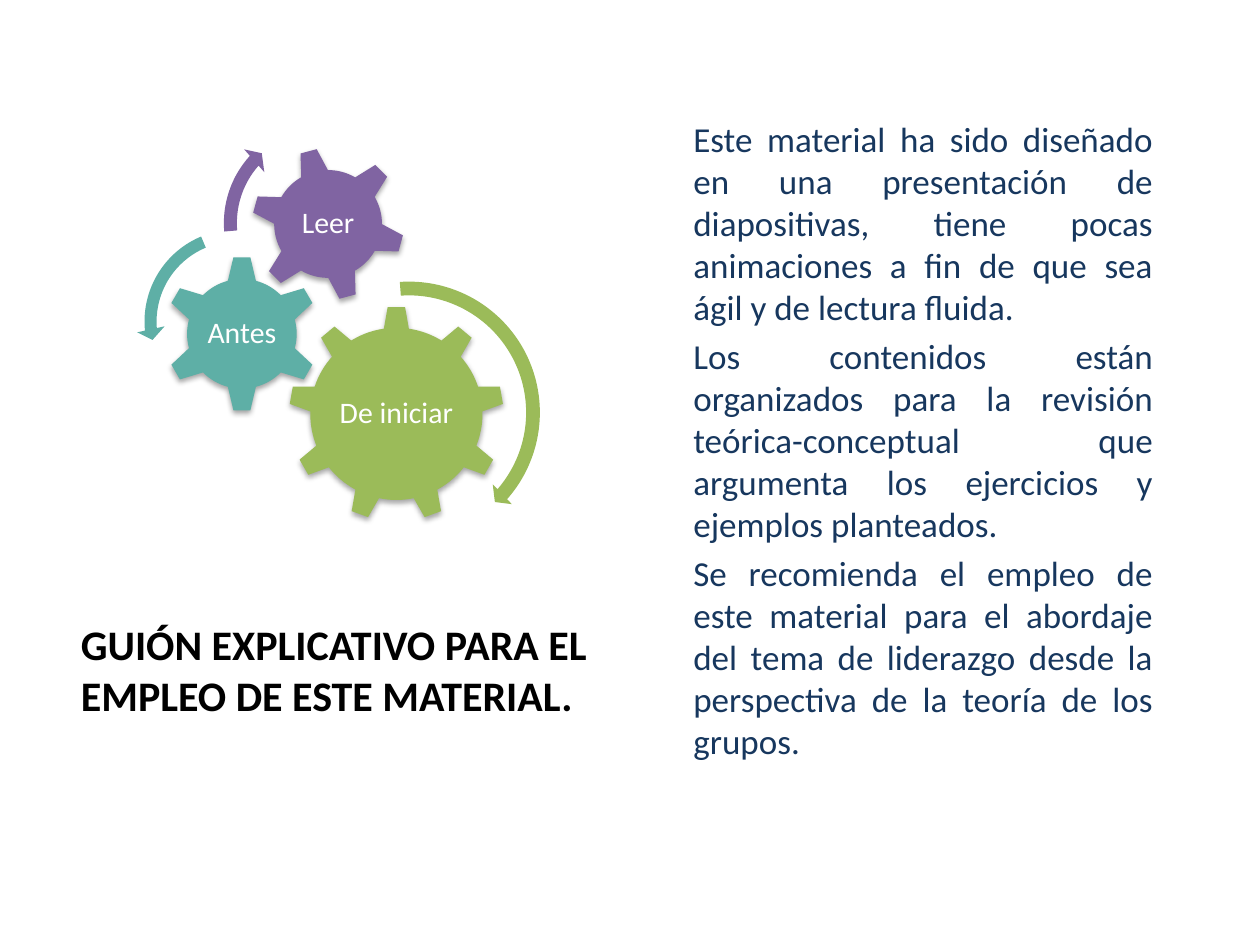
from lxml.etree import SubElement
from pptx import Presentation
from pptx.dml.color import RGBColor
from pptx.enum.shapes import MSO_SHAPE
from pptx.enum.text import MSO_ANCHOR, MSO_AUTO_SIZE, PP_ALIGN
from pptx.oxml import parse_xml
from pptx.oxml.ns import qn
from pptx.util import Pt

GREEN, TEAL, PURPLE = "9BBB59", "5EAFA6", "8064A2"
BLACK, NAVY, WHITE = "000000", "17375E", "FFFFFF"

SHADOW = (
    '<a:effectLst xmlns:a="http://schemas.openxmlformats.org/drawingml/2006/main">'
    '<a:outerShdw blurRad="39370" dist="22860" dir="5400000" rotWithShape="0">'
    '<a:srgbClr val="000000"><a:alpha val="35000"/></a:srgbClr>'
    '</a:outerShdw></a:effectLst>'
)


def rgb(value):
    return RGBColor.from_string(value)


class SlideBuilder:
    font = "Calibri"

    def __init__(self, prs):
        self.s = prs.slides.add_slide(prs.slide_layouts[1])
        self.gears = self.s.shapes.add_group_shape().shapes

    def place(self, sp, left, top, width, height):
        sp.left, sp.top = Pt(left), Pt(top)
        sp.width, sp.height = Pt(width), Pt(height)

    def frame(self, sp, anchor):
        tf = sp.text_frame
        tf.word_wrap = True
        tf.auto_size = MSO_AUTO_SIZE.NONE
        tf.vertical_anchor = anchor
        return tf

    def run(self, p, text, size, color, align, bold=False):
        p.alignment = align
        r = p.add_run()
        r.text = text
        r.font.name, r.font.size, r.font.bold = self.font, Pt(size), bold
        r.font.color.rgb = rgb(color)

    def title(self, text, box):
        sp = self.s.shapes.title
        self.place(sp, *box)
        tf = self.frame(sp, MSO_ANCHOR.TOP)
        self.run(tf.paragraphs[0], text, 24, BLACK, PP_ALIGN.LEFT, bold=True)

    def body(self, texts, box):
        sp = self.s.placeholders[1]
        self.place(sp, *box)
        tf = self.frame(sp, MSO_ANCHOR.BOTTOM)
        for i, text in enumerate(texts):
            p = tf.add_paragraph() if i else tf.paragraphs[0]
            p.space_before = Pt(4)
            self.run(p, text, 20, NAVY, PP_ALIGN.JUSTIFY)
            # No bullet, no hanging indent
            pPr = p._p.get_or_add_pPr()
            pPr.set("marL", "0")
            pPr.set("indent", "0")
            SubElement(pPr, qn("a:buNone"))

    def shape(self, kind, left, top, size, color):
        sp = self.gears.add_shape(kind, Pt(left), Pt(top), Pt(size), Pt(size))
        sp.shadow.inherit = False
        sp.fill.solid()
        sp.fill.fore_color.rgb = rgb(color)
        sp.line.fill.background()
        return sp

    def gear(self, kind, text, left, top, size, color, label, rotation=0):
        sp = self.shape(kind, left, top, size, color)
        sp.rotation = rotation
        spPr = sp._element.spPr
        spPr.replace(spPr.find(qn("a:effectLst")), parse_xml(SHADOW))
        # Label centred on the gear
        width, height = label
        tb = self.gears.add_textbox(
            Pt(left + (size - width) / 2), Pt(top + (size - height) / 2),
            Pt(width), Pt(height))
        tf = self.frame(tb, MSO_ANCHOR.MIDDLE)
        tf.margin_left = tf.margin_right = Pt(1.5)
        tf.margin_top = tf.margin_bottom = Pt(1.5)
        p = tf.paragraphs[0]
        p.line_spacing = 0.9
        self.run(p, text, 17, WHITE, PP_ALIGN.CENTER)

    def arrow(self, kind, left, top, size, color, adjustments):
        sp = self.shape(kind, left, top, size, color)
        for i, value in enumerate(adjustments):
            sp.adjustments[i] = value


def main():
    prs = Presentation()
    prs.slide_width, prs.slide_height = Pt(720), Pt(540)
    b = SlideBuilder(prs)

    # Title and explanation
    b.title("GUIÓN EXPLICATIVO PARA EL EMPLEO DE ESTE MATERIAL.",
            (39, 350, 317, 78.5))
    b.body([
        "Este material ha sido diseñado en una presentación de diapositivas, "
        "tiene pocas animaciones a fin de que sea ágil y de lectura fluida.",
        "Los contenidos están organizados para la revisión teórica-conceptual "
        "que argumenta los ejercicios y ejemplos planteados.",
        "Se recomienda el empleo de este material para el abordaje del tema de "
        "liderazgo desde la perspectiva de la teoría de los grupos.",
    ], (389, 97, 277, 342))

    # Gears with their labels
    b.gear(MSO_SHAPE.GEAR_9, "De iniciar", 165, 175, 123, GREEN, (74, 64))
    b.gear(MSO_SHAPE.GEAR_6, "Antes", 93.5, 146, 89.5, TEAL, (45, 44))
    b.gear(MSO_SHAPE.GEAR_6, "Leer", 143.5, 84, 88, PURPLE, (49, 49), 345)

    # Turning arrows
    b.arrow(MSO_SHAPE.CIRCULAR_ARROW, 155, 157, 157.5, GREEN,
            (0.05, 2.99, 24.72, 159.6, 0.05))
    b.arrow(MSO_SHAPE.LEFT_CIRCULAR_ARROW, 78, 126.5, 114.5, TEAL,
            (0.06, 4.3, 104.89, 148.38, 0.07))
    b.arrow(MSO_SHAPE.CIRCULAR_ARROW, 123, 65.5, 124, PURPLE,
            (0.06, 3.94, 133.14, 105.08, 0.07))

    prs.save("out.pptx")


if __name__ == "__main__":
    main()
